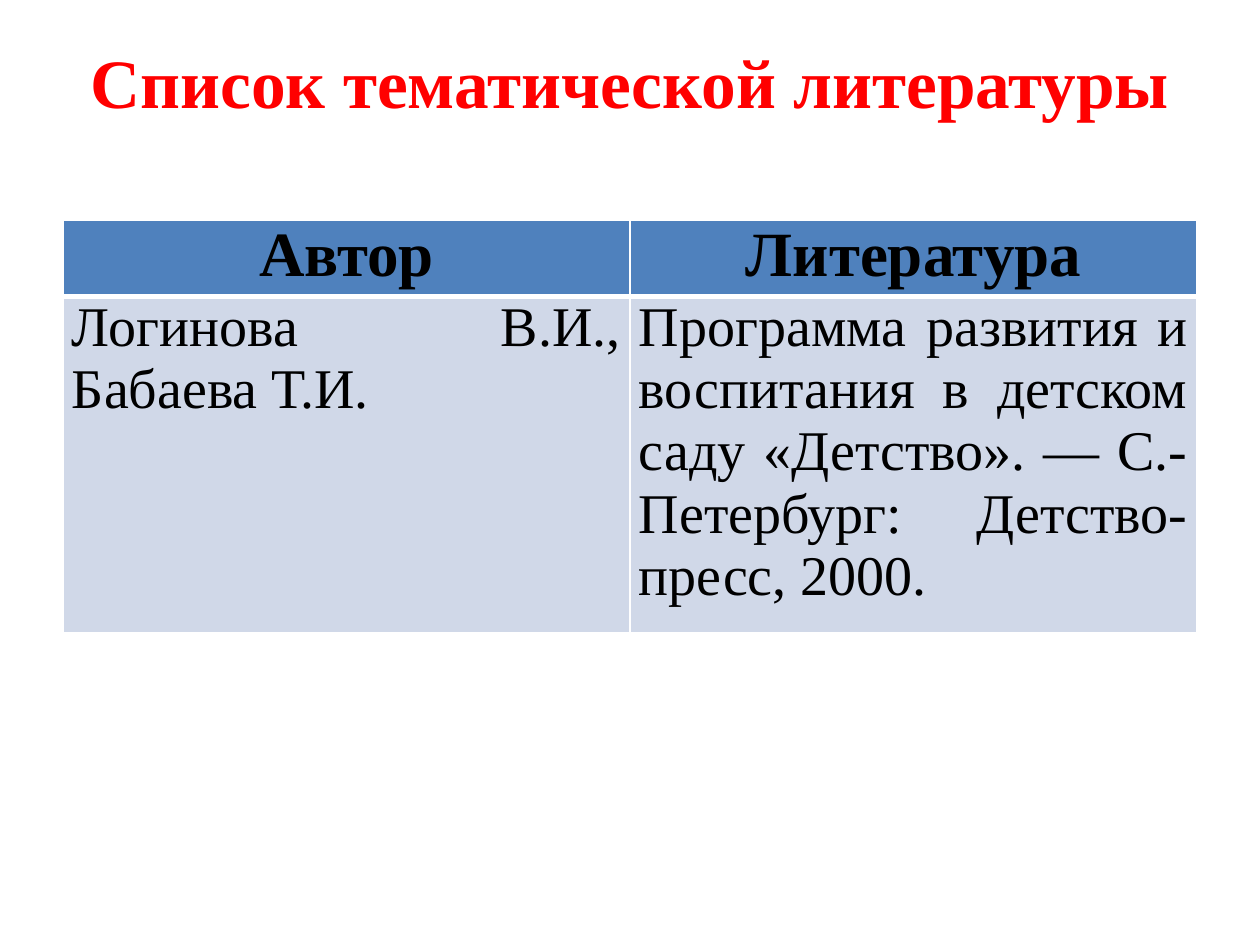
from dataclasses import dataclass

import pptx
import pptx.dml.color
import pptx.enum.text
import pptx.oxml
import pptx.oxml.ns
import pptx.util
from pptx.util import Cm

ALIGN = pptx.enum.text.PP_ALIGN


@dataclass(frozen=True)
class Theme:
    font: str = "Times New Roman"
    title_color: str = "FF0000"
    text_color: str = "000000"
    header_fill: str = "4F81BD"
    body_fill: str = "D0D8E8"
    border_color: str = "FFFFFF"
    title_size: float = 39.6
    header_size: float = 36
    body_size: float = 32
    border_width: float = 1
    header_rule_width: float = 3


THEME = Theme()
TITLE = "Список тематической литературы"
ROWS = [
    ("Автор", "Литература"),
    (
        "Логинова В.И., Бабаева Т.И.",
        "Программа развития и воспитания в детском саду «Детство». "
        "— С.-Петербург: Детство-пресс, 2000.",
    ),
]
LEFT = Cm(1.27)
WIDTH = Cm(22.86)
ROW_HEIGHTS = [Cm(1.4), Cm(6.25)]


def write_text(text_frame, text, size, color, bold, alignment):
    text_frame.text = text
    paragraph = text_frame.paragraphs[0]
    paragraph.alignment = alignment
    font = paragraph.runs[0].font
    font.name = THEME.font
    font.size = pptx.util.Pt(size)
    font.bold = bold
    font.color.rgb = pptx.dml.color.RGBColor.from_string(color)


def add_title(slide):
    shape = slide.shapes.add_textbox(LEFT, Cm(0.76), WIDTH, Cm(3.18))
    text_frame = shape.text_frame
    text_frame.word_wrap = True
    text_frame.vertical_anchor = pptx.enum.text.MSO_ANCHOR.TOP
    text_frame.margin_top = Cm(0.04)
    write_text(text_frame, TITLE, THEME.title_size, THEME.title_color, True, ALIGN.CENTER)


def set_border(cell, side, width):
    properties = cell._tc.get_or_add_tcPr()
    border = pptx.oxml.parse_xml(
        f'<a:{side} {pptx.oxml.ns.nsdecls("a")} w="{pptx.util.Pt(width)}">'
        f'<a:solidFill><a:srgbClr val="{THEME.border_color}"/></a:solidFill></a:{side}>'
    )
    properties.append(border)


def format_cell(cell, text, is_header, touches_header):
    cell.margin_left = cell.margin_right = Cm(0.18)
    cell.margin_top = cell.margin_bottom = 0
    size = THEME.header_size if is_header else THEME.body_size
    alignment = ALIGN.CENTER if is_header else ALIGN.JUSTIFY
    write_text(cell.text_frame, text, size, THEME.text_color, is_header, alignment)
    for side in ("lnL", "lnR", "lnT", "lnB"):
        is_rule = (is_header and side == "lnB") or (touches_header and side == "lnT")
        set_border(cell, side, THEME.header_rule_width if is_rule else THEME.border_width)
    fill = THEME.header_fill if is_header else THEME.body_fill
    cell.fill.solid()
    cell.fill.fore_color.rgb = pptx.dml.color.RGBColor.from_string(fill)


def add_literature_table(slide):
    frame = slide.shapes.add_table(
        len(ROWS), len(ROWS[0]), LEFT, Cm(4.45), WIDTH, sum(ROW_HEIGHTS)
    )
    table = frame.table
    for row_index, (texts, height) in enumerate(zip(ROWS, ROW_HEIGHTS)):
        table.rows[row_index].height = height
        for column_index, text in enumerate(texts):
            cell = table.cell(row_index, column_index)
            format_cell(cell, text, row_index == 0, row_index == 1)


def main():
    presentation = pptx.Presentation()
    presentation.slide_width = Cm(25.4)
    presentation.slide_height = Cm(19.05)
    slide = presentation.slides.add_slide(presentation.slide_layouts[6])
    add_title(slide)
    add_literature_table(slide)
    presentation.save("out.pptx")


if __name__ == "__main__":
    main()
